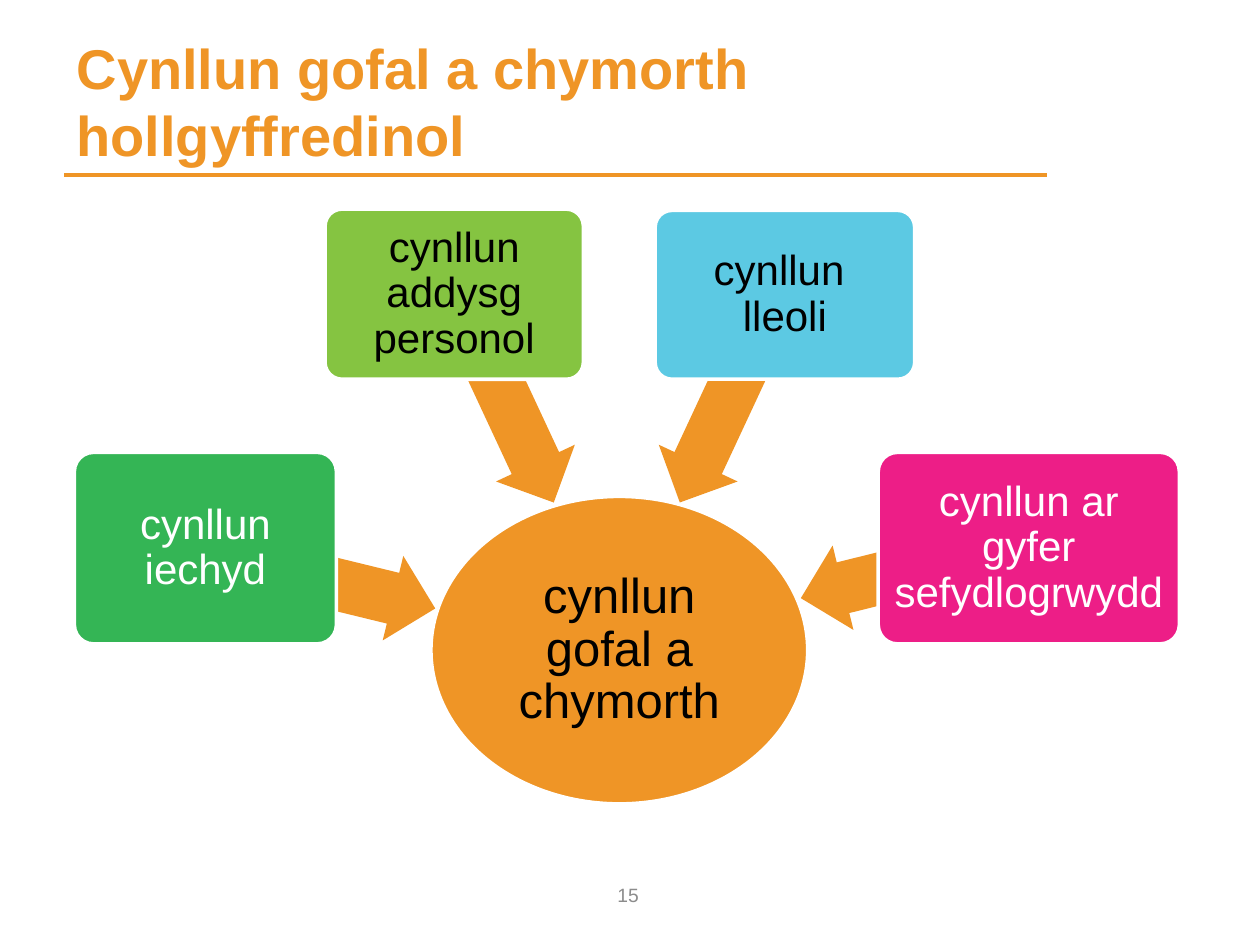
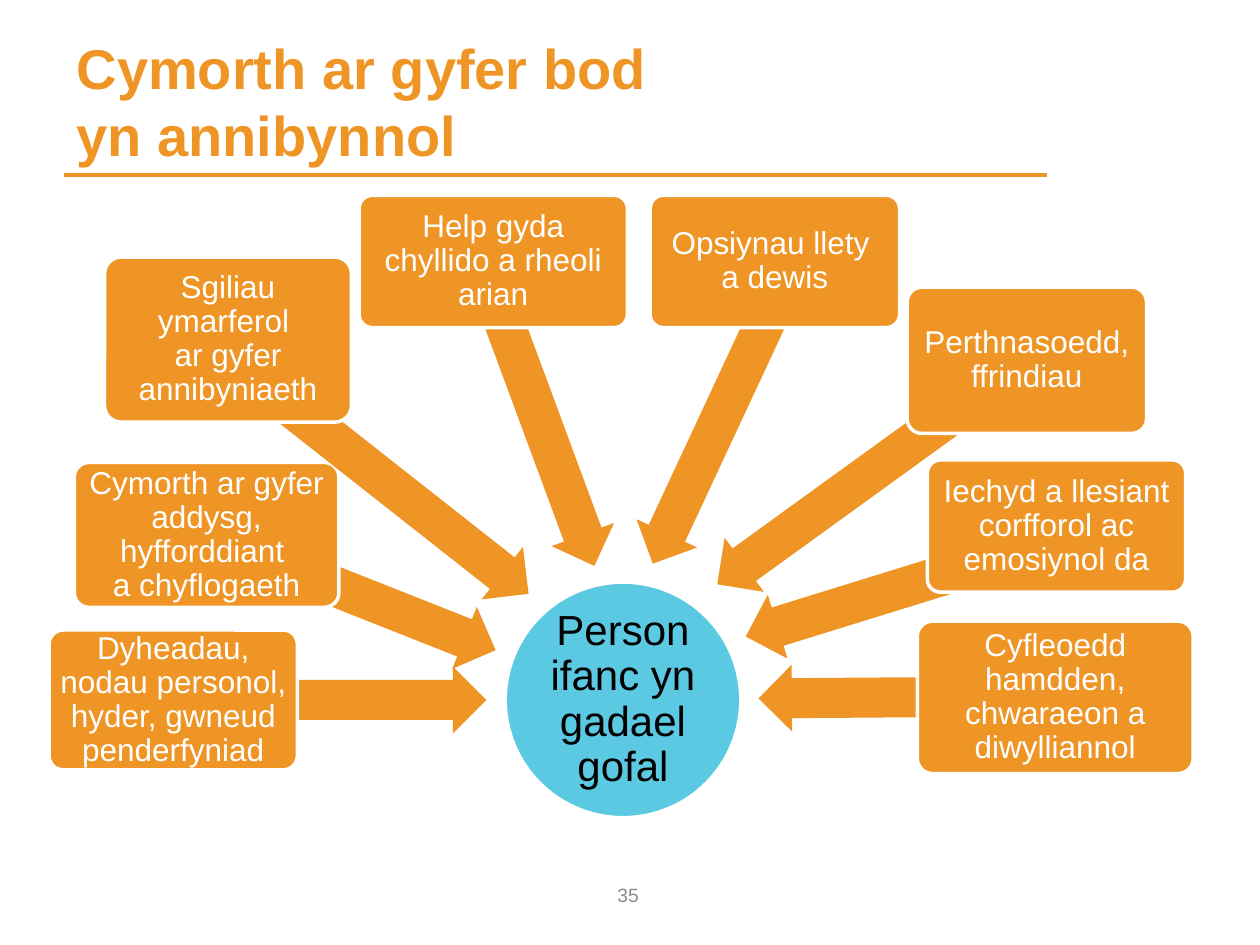
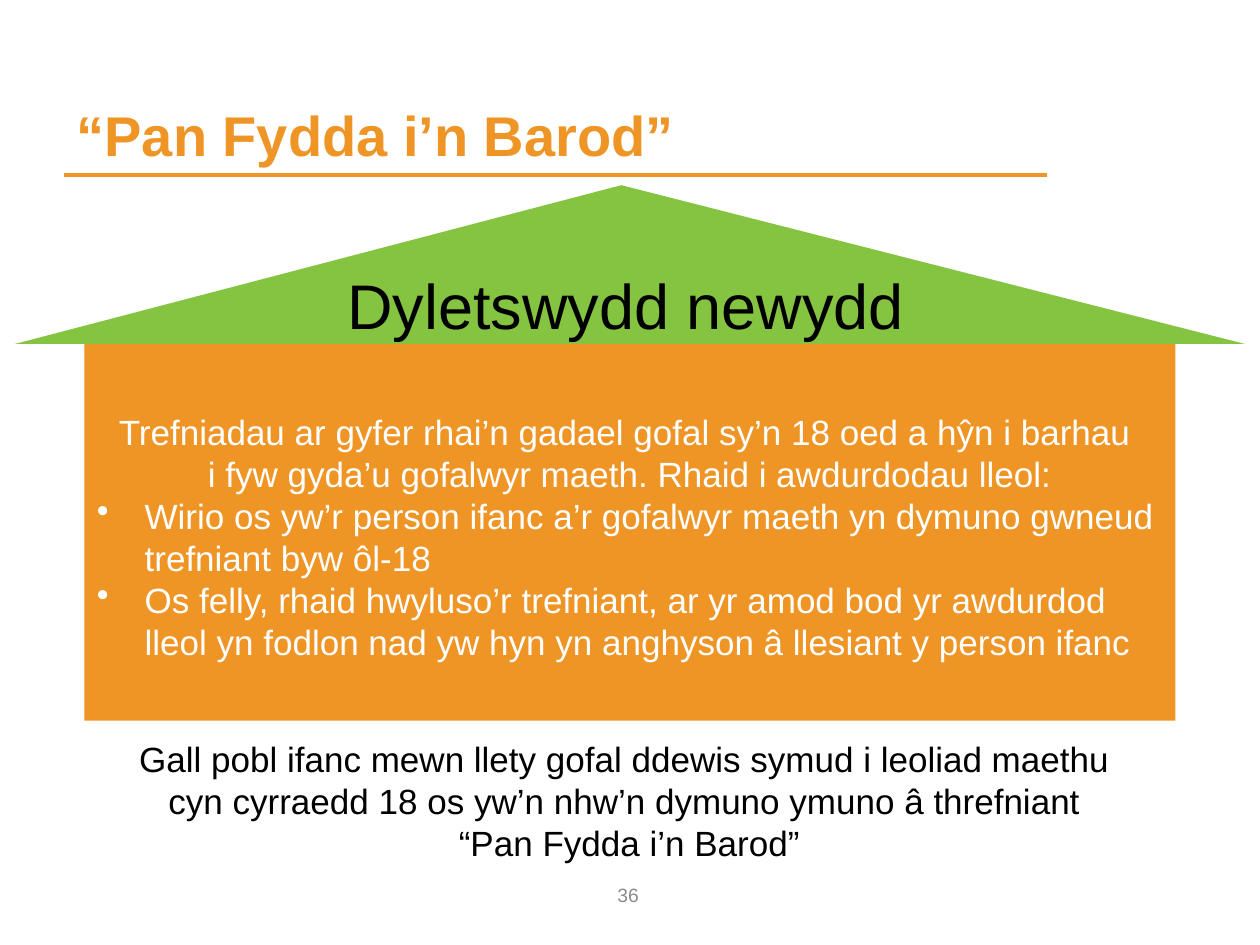
from typing import NamedTuple

from lxml.etree import SubElement
from pptx import Presentation
from pptx.dml.color import RGBColor
from pptx.enum.shapes import MSO_CONNECTOR, MSO_SHAPE
from pptx.enum.text import MSO_ANCHOR, PP_ALIGN
from pptx.oxml.ns import qn
from pptx.slide import Slide
from pptx.util import Pt

EMU_PER_PX = 9144  # 100 px to the inch
FONT = "Arial"
COLORS = {
    "orange": "EF9526",
    "green": "34B555",
    "lime": "85C441",
    "cyan": "5CC9E3",
    "pink": "ED1E87",
    "white": "FFFFFF",
    "black": "000000",
    "grey": "8C8C8C",
}


class Box(NamedTuple):
    left: int
    top: int
    width: int
    height: int


class TextStyle(NamedTuple):
    size: int
    color: str = "black"
    bold: bool = False
    align: PP_ALIGN = PP_ALIGN.CENTER
    anchor: MSO_ANCHOR = MSO_ANCHOR.MIDDLE
    line_spacing: float = 1.0
    margins: tuple[int, int, int, int] = (10, 5, 10, 5)


class Arrow(NamedTuple):
    """Unrotated place of an arrow and the clockwise angle it points along."""
    left: int
    top: int
    length: int
    angle: float


class Spoke(NamedTuple):
    text: str
    box: Box
    arrow: Arrow
    fill: str = "orange"
    text_color: str = "white"


class Wheel(NamedTuple):
    """A central ellipse with labelled boxes pointing at it."""
    hub_text: str
    hub: Box
    hub_fill: str
    hub_size: int
    spoke_size: int
    spoke_margin: int
    arrow_thickness: int
    spokes: list[Spoke]


TITLE_BOX = Box(51, 29, 780, 109)
NUMBER_BOX = Box(382, 690, 233, 40)
RULE_Y = 139
TITLE_STYLE = TextStyle(32, "orange", True, PP_ALIGN.LEFT, MSO_ANCHOR.BOTTOM)
NUMBER_STYLE = TextStyle(11, "grey")
BULLET_INDENT = 38

CARE_PLAN = Wheel(
    "cynllun gofal a chymorth", Box(342, 394, 299, 244), "orange", 28, 24, 5, 69,
    [
        Spoke("cynllun iechyd", Box(59, 359, 208, 152),
              Arrow(167, 427, 181, 13.7), "green"),
        Spoke("cynllun addysg personol", Box(258, 166, 205, 135),
              Arrow(315, 285, 175, 65), "lime", "black"),
        Spoke("cynllun \nlleoli", Box(520, 167, 206, 134),
              Arrow(489, 285, 175, 115), "cyan", "black"),
        Spoke("cynllun ar gyfer sefydlogrwydd", Box(697, 359, 239, 152),
              Arrow(633, 419, 177, 166.1), "pink"),
    ],
)

INDEPENDENCE = Wheel(
    "Person ifanc yn gadael gofal", Box(401, 462, 187, 187), "cyan", 24, 18, 4, 53,
    [
        Spoke("Dyheadau, nodau personol, hyder, gwneud penderfyniad",
              Box(39, 500, 197, 111), Arrow(137, 529, 249, 0)),
        Spoke("Cymorth ar gyfer addysg, hyfforddiant \na chyflogaeth",
              Box(59, 367, 210, 115), Arrow(155, 444, 247, 21.6)),
        Spoke("Sgiliau ymarferol \nar gyfer annibyniaeth",
              Box(83, 204, 196, 131), Arrow(140, 348, 313, 38.2)),
        Spoke("Help gyda chyllido a rheoli arian",
              Box(285, 155, 213, 105), Arrow(300, 303, 255, 69.7)),
        Spoke("Opsiynau llety \na dewis",
              Box(516, 155, 198, 105), Arrow(443, 303, 260, 115)),
        Spoke("Perthnasoedd, ffrindiau",
              Box(720, 228, 190, 116), Arrow(540, 347, 308, 144.1)),
        Spoke("Iechyd a llesiant corfforol ac emosiynol da",
              Box(736, 365, 205, 105), Arrow(586, 440, 262, 162.8)),
        Spoke("Cyfleoedd hamdden, chwaraeon a diwylliannol",
              Box(728, 493, 219, 121), Arrow(602, 527, 235, 179.6)),
    ],
)

DUTY_INTRO = ("Trefniadau ar gyfer rhai’n gadael gofal sy’n 18 oed a hŷn i barhau \n"
              "i fyw gyda’u gofalwyr maeth. Rhaid i awdurdodau lleol:")
DUTY_BULLETS = [
    "Wirio os yw’r person ifanc a’r gofalwyr maeth yn dymuno gwneud "
    "trefniant byw ôl-18",
    "Os felly, rhaid hwyluso’r trefniant, ar yr amod bod yr awdurdod lleol "
    "yn fodlon nad yw hyn yn anghyson â llesiant y person ifanc",
]
DUTY_NOTE = ("Gall pobl ifanc mewn llety gofal ddewis symud i leoliad maethu \n"
             "cyn cyrraedd 18 os yw’n nhw’n dymuno ymuno â threfniant \n"
             "“Pan Fydda i’n Barod”")


def px(length: int) -> int:
    return length * EMU_PER_PX


def rgb(name: str) -> RGBColor:
    return RGBColor.from_string(COLORS[name])


def emu(box: Box) -> list[int]:
    return [px(length) for length in box]


def add_bullet(paragraph) -> None:
    properties = paragraph._p.get_or_add_pPr()
    properties.set("marL", str(px(BULLET_INDENT)))
    properties.set("indent", str(-px(BULLET_INDENT)))
    SubElement(properties, qn("a:buChar"), char="•")


def write_text(shape, style: TextStyle, text: str, bullets: list[str] | None = None) -> None:
    frame = shape.text_frame
    left, top, right, bottom = style.margins
    frame_format = {
        "word_wrap": True,
        "vertical_anchor": style.anchor,
        "margin_left": px(left),
        "margin_top": px(top),
        "margin_right": px(right),
        "margin_bottom": px(bottom),
    }
    for name, value in frame_format.items():
        setattr(frame, name, value)
    font_format = {"name": FONT, "size": Pt(style.size), "bold": style.bold}
    for index, content in enumerate([text, *(bullets or [])]):
        paragraph = frame.add_paragraph() if index else frame.paragraphs[0]
        paragraph.text = content
        paragraph.alignment = PP_ALIGN.LEFT if index else style.align
        paragraph.line_spacing = style.line_spacing
        if index:
            add_bullet(paragraph)
        for run in paragraph.runs:
            for name, value in font_format.items():
                setattr(run.font, name, value)
            run.font.color.rgb = rgb(style.color)


def add_text(slide: Slide, box: Box, style: TextStyle, text: str) -> None:
    write_text(slide.shapes.add_textbox(*emu(box)), style, text)


def add_filled(slide: Slide, kind: MSO_SHAPE, box: Box, fill: str,
               adjustments: tuple[float, ...] = (), outlined: bool = False):
    shape = slide.shapes.add_shape(kind, *emu(box))
    shape.shadow.inherit = False
    shape.fill.solid()
    shape.fill.fore_color.rgb = rgb(fill)
    if outlined:
        shape.line.color.rgb = rgb("white")
        shape.line.width = Pt(2)
    else:
        shape.line.fill.background()
    for index, value in enumerate(adjustments):
        shape.adjustments[index] = value
    return shape


def add_base_slide(presentation, title: str, number: int) -> Slide:
    """Add a blank slide with the shared title, rule and slide number."""
    slide = presentation.slides.add_slide(presentation.slide_layouts[6])
    rule = slide.shapes.add_connector(
        MSO_CONNECTOR.STRAIGHT, px(TITLE_BOX.left), px(RULE_Y),
        px(TITLE_BOX.left + TITLE_BOX.width), px(RULE_Y))
    rule.line.color.rgb = rgb("orange")
    rule.line.width = Pt(2)
    SubElement(rule._element.spPr, qn("a:effectLst"))
    add_text(slide, NUMBER_BOX, NUMBER_STYLE, str(number))
    add_text(slide, TITLE_BOX, TITLE_STYLE, title)
    return slide


def add_wheel(slide: Slide, wheel: Wheel) -> None:
    hub = add_filled(slide, MSO_SHAPE.OVAL, wheel.hub, wheel.hub_fill, outlined=True)
    write_text(hub, TextStyle(wheel.hub_size, line_spacing=0.9, margins=(2,) * 4),
               wheel.hub_text)
    for spoke in wheel.spokes:
        left, top, length, angle = spoke.arrow
        arrow = add_filled(slide, MSO_SHAPE.LEFT_ARROW,
                           Box(left, top, length, wheel.arrow_thickness),
                           "orange", (0.6, 0.5))
        arrow.rotation = 180 + angle
        label = add_filled(slide, MSO_SHAPE.ROUNDED_RECTANGLE, spoke.box,
                           spoke.fill, (0.1,), outlined=True)
        style = TextStyle(wheel.spoke_size, spoke.text_color, line_spacing=0.9,
                          margins=(wheel.spoke_margin,) * 4)
        write_text(label, style, spoke.text)


def add_duty_house(slide: Slide) -> None:
    walls = add_filled(slide, MSO_SHAPE.RECTANGLE, Box(67, 273, 866, 299), "orange")
    write_text(walls, TextStyle(20, "white", margins=(10, 11, 10, 5)),
               DUTY_INTRO, DUTY_BULLETS)
    roof = add_filled(slide, MSO_SHAPE.ISOSCELES_TRIANGLE, Box(12, 147, 976, 126),
                      "lime", (0.493,))
    write_text(roof, TextStyle(36), "Dyletswydd newydd")
    add_text(slide, Box(39, 580, 921, 111),
             TextStyle(20, anchor=MSO_ANCHOR.TOP), DUTY_NOTE)


def main() -> None:
    presentation = Presentation()
    presentation.slide_width = px(1000)
    presentation.slide_height = px(750)
    add_wheel(add_base_slide(presentation, "Cynllun gofal a chymorth hollgyffredinol", 15),
              CARE_PLAN)
    add_wheel(add_base_slide(presentation, "Cymorth ar gyfer bod \nyn annibynnol", 35),
              INDEPENDENCE)
    add_duty_house(add_base_slide(presentation, "“Pan Fydda i’n Barod”", 36))
    presentation.save("out.pptx")


if __name__ == "__main__":
    main()
